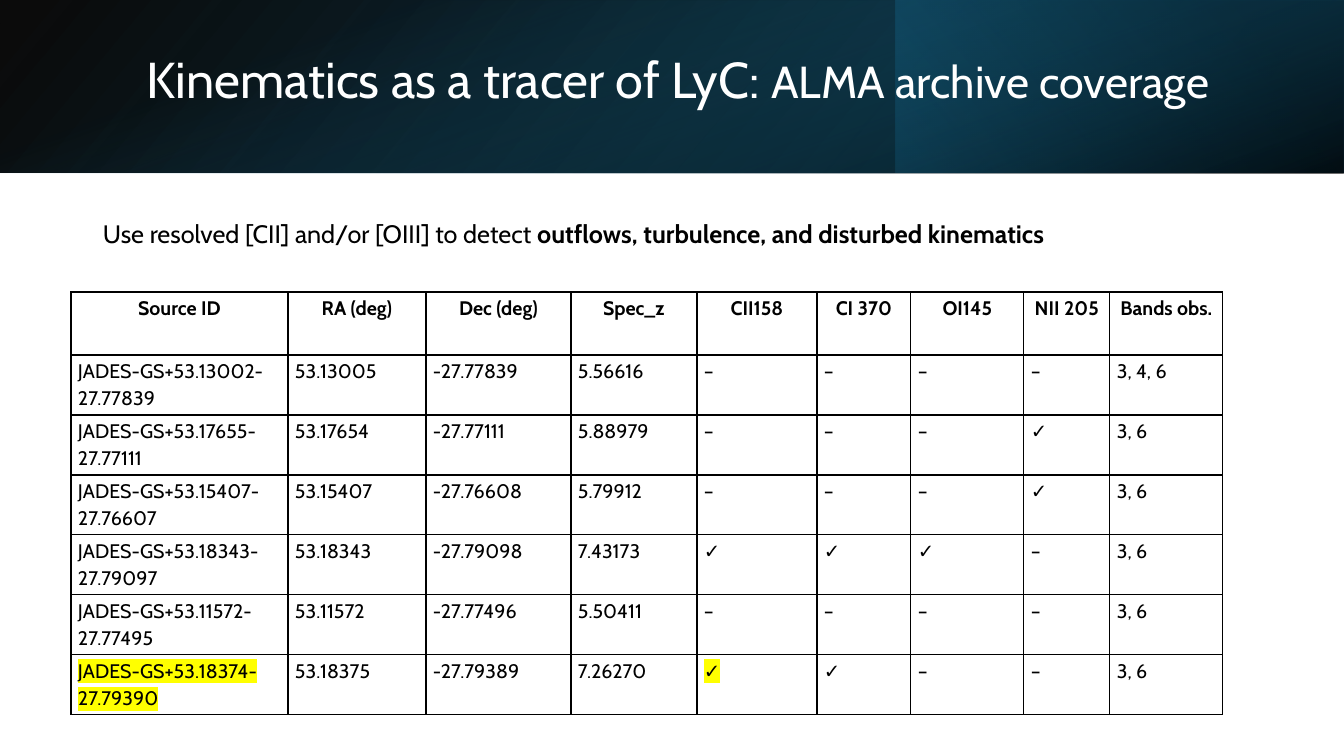
from lxml.etree import SubElement
from pptx import Presentation
from pptx.dml.color import RGBColor
from pptx.enum.shapes import MSO_SHAPE
from pptx.enum.text import MSO_ANCHOR, PP_ALIGN
from pptx.oxml.ns import qn
from pptx.util import Pt

PX = 12192000 / 1344
FONT = "Cabin"
BLACK = RGBColor(0x00, 0x00, 0x00)
WHITE = RGBColor(0xFF, 0xFF, 0xFF)
NAVY = RGBColor(0x0B, 0x30, 0x41)
BLUE = RGBColor(0x10, 0x48, 0x62)
TEAL = RGBColor(0x15, 0x60, 0x82)
YELLOW = RGBColor(0xFF, 0xFF, 0x00)

# Runs: text, size, bold
TITLE = [("Kinematics as a tracer of LyC: ", 36, False),
         ("ALMA archive coverage", 32, False)]
METHOD = [("Use resolved [CII] and/or [OIII] to detect ", 18, False),
          ("outflows, turbulence, and disturbed kinematics", 18, True)]

# Banner layers: box, rotation, flipped, angle, stops (position %, colour, opacity %)
BANNER = [
    ((0, 0, 1344, 173), 0, True, 140, [(0, BLACK, 96), (100, BLUE, 100)]),
    ((896, 0, 448, 173), 180, False, 320, [(19, NAVY, 68), (100, TEAL, 79)]),
    ((585, -585, 173, 1344), 90, False, 340, [(23, TEAL, 0), (99, BLACK, 74)]),
]

HEADER = ["Source ID", "RA (deg)", "Dec (deg)", "Spec_z", "CII158", "CI 370",
          "OI145", "NII 205", "Bands obs."]
SOURCES = [
    ["JADES-GS+53.13002-27.77839", "53.13005", "-27.77839", "5.56616", "–", "–", "–", "–", "3, 4, 6"],
    ["JADES-GS+53.17655-27.77111", "53.17654", "-27.77111", "5.88979", "–", "–", "–", "✓", "3, 6"],
    ["JADES-GS+53.15407-27.76607", "53.15407", "-27.76608", "5.79912", "–", "–", "–", "✓", "3, 6"],
    ["JADES-GS+53.18343-27.79097", "53.18343", "-27.79098", "7.43173", "✓", "✓", "✓", "–", "3, 6"],
    ["JADES-GS+53.11572-27.77495", "53.11572", "-27.77496", "5.50411", "–", "–", "–", "–", "3, 6"],
    ["JADES-GS+53.18374-27.79390", "53.18375", "-27.79389", "7.26270", "✓", "✓", "–", "–", "3, 6"],
]
HIGHLIGHTED = {(6, 0), (6, 4)}
COL_WIDTHS = [217, 138, 145, 126, 120, 94, 113, 86, 113]
ROW_HEIGHTS = [63] + [60] * len(SOURCES)


def px(n):
    return round(n * PX)


def add_layer(s, box, rotation, flipped, angle, stops):
    sp = s.shapes.add_shape(MSO_SHAPE.RECTANGLE, *map(px, box))
    sp.shadow.inherit = False
    sp.rotation = rotation
    if flipped:
        sp._element.spPr.find(qn("a:xfrm")).set("flipH", "1")
    sp.line.fill.background()
    sp.fill.gradient()
    sp.fill.gradient_angle = 360 - angle
    for stop, (position, color, opacity) in zip(sp.fill.gradient_stops, stops):
        stop.position = position / 100
        stop.color.rgb = color
    for clr, (_, _, opacity) in zip(sp._element.spPr.iter(qn("a:srgbClr")), stops):
        SubElement(clr, qn("a:alpha")).set("val", str(opacity * 1000))


def add_text(s, box, runs, color, wrap, anchor, spacing):
    tf = s.shapes.add_textbox(*map(px, box)).text_frame
    tf.word_wrap = wrap
    tf.vertical_anchor = anchor
    p = tf.paragraphs[0]
    p.line_spacing = spacing
    p.font.name = FONT
    p.font.color.rgb = color
    for text, size, bold in runs:
        r = p.add_run()
        r.text = text
        r.font.size = Pt(size)
        r.font.bold = bold


def set_borders(cell):
    tcPr = cell._tc.get_or_add_tcPr()
    for side in ("lnL", "lnR", "lnT", "lnB"):
        ln = SubElement(tcPr, qn(f"a:{side}"), w=str(Pt(1)))
        fill = SubElement(ln, qn("a:solidFill"))
        SubElement(fill, qn("a:srgbClr"), val=str(BLACK))


def fill_cell(cell, text, is_header, highlighted):
    cell.margin_left = cell.margin_right = px(7)
    cell.margin_top, cell.margin_bottom = px(1), 0
    set_borders(cell)
    cell.fill.background()
    p = cell.text_frame.paragraphs[0]
    p.alignment = PP_ALIGN.CENTER if is_header else PP_ALIGN.LEFT
    p.line_spacing = 1.15
    p.space_after = Pt(8)
    p.font.name = FONT
    p.font.size = Pt(14)
    p.font.bold = is_header
    p.font.color.rgb = BLACK
    r = p.add_run()
    r.text = text
    if highlighted:
        mark = SubElement(r._r.get_or_add_rPr(), qn("a:highlight"))
        SubElement(mark, qn("a:srgbClr"), val=str(YELLOW))


def add_source_table(s, left, top):
    rows = [HEADER] + SOURCES
    table = s.shapes.add_table(len(rows), len(HEADER), px(left), px(top),
                               px(sum(COL_WIDTHS)), px(sum(ROW_HEIGHTS))).table
    table.first_row = table.horz_banding = False
    for column, width in zip(table.columns, COL_WIDTHS):
        column.width = px(width)
    for row, height in zip(table.rows, ROW_HEIGHTS):
        row.height = px(height)
    for i, row in enumerate(rows):
        for j, text in enumerate(row):
            fill_cell(table.cell(i, j), text, i == 0, (i, j) in HIGHLIGHTED)


def main():
    prs = Presentation()
    prs.slide_width, prs.slide_height = px(1344), px(756)
    s = prs.slides.add_slide(prs.slide_layouts[6])
    for layer in BANNER:
        add_layer(s, *layer)
    add_text(s, (137, 14, 1121, 136), TITLE, WHITE, True, MSO_ANCHOR.MIDDLE, 0.9)
    add_source_table(s, 71, 292)
    add_text(s, (93, 213, 1015, 40), METHOD, BLACK, False, MSO_ANCHOR.TOP, 1.0)
    prs.save("out.pptx")


if __name__ == "__main__":
    main()
